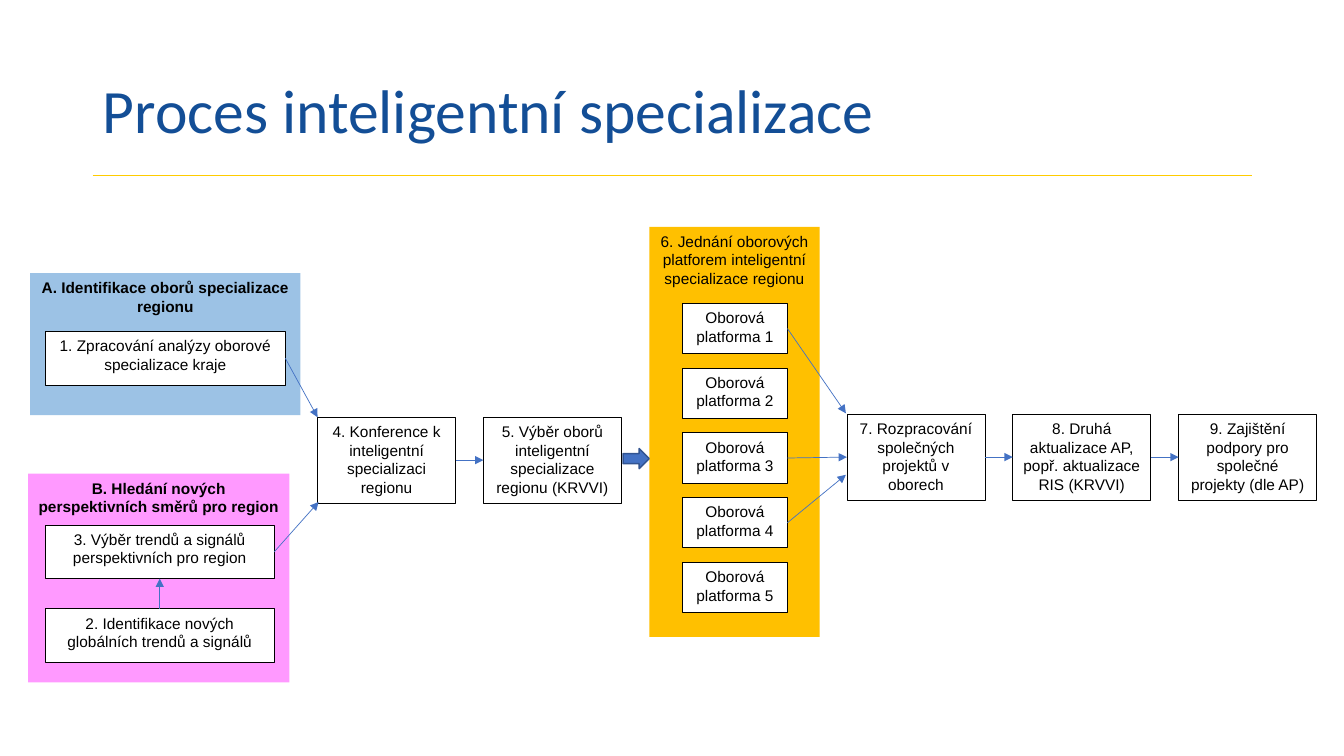
from lxml import etree
from pptx import Presentation
from pptx.dml.color import RGBColor
from pptx.enum.shapes import MSO_CONNECTOR as LINE, MSO_SHAPE as SHAPE
from pptx.enum.text import MSO_ANCHOR as ANCHOR, PP_ALIGN as ALIGN
from pptx.oxml.ns import qn
from pptx.util import Inches, Pt

# Grid of square cells, ten to the inch
CELL = Inches(0.1)
TOP, LEFT, BOTTOM, RIGHT = range(4)


def grid(*lengths):
    return [round(n * CELL) for n in lengths]


def rgb(color):
    return RGBColor.from_string(color)


class Diagram:
    black, white, blue = "000000", "FFFFFF", "4472C4"
    font, size = "Arial", 11

    def __init__(self, prs):
        self.slide = prs.slides.add_slide(prs.slide_layouts[5])

    def title(self, text, x, y, w, h):
        sp = self.slide.shapes.title
        sp.left, sp.top, sp.width, sp.height = grid(x, y, w, h)
        tf = sp.text_frame
        tf.text = text
        tf.vertical_anchor = ANCHOR.MIDDLE
        p = tf.paragraphs[0]
        p.alignment, p.line_spacing = ALIGN.LEFT, 0.9
        p.font.name, p.font.size = "Calibri", Pt(44)
        p.font.color.rgb = rgb("134E96")

    def shape(self, kind, x, y, w, h, fill, line=None, width=0.5):
        sp = self.slide.shapes.add_shape(kind, *grid(x, y, w, h))
        sp.shadow.inherit = False
        sp.fill.solid()
        sp.fill.fore_color.rgb = rgb(fill)
        if line:
            sp.line.color.rgb = rgb(line)
            sp.line.width = Pt(width)
        else:
            sp.line.fill.background()
        return sp

    def label(self, sp, text, bold=False):
        tf = sp.text_frame
        tf.word_wrap = True
        tf.vertical_anchor = ANCHOR.TOP
        tf.text = text
        p = tf.paragraphs[0]
        p.alignment = ALIGN.CENTER
        p.font.name, p.font.size, p.font.bold = self.font, Pt(self.size), bold
        p.font.color.rgb = rgb(self.black)

    def panel(self, text, x, y, w, h, fill, bold=True):
        self.label(self.shape(SHAPE.RECTANGLE, x, y, w, h, fill), text, bold)

    def box(self, text, x, y, w, h):
        sp = self.shape(SHAPE.RECTANGLE, x, y, w, h, self.white, self.black)
        self.label(sp, text)
        return sp

    def line(self, start, end, color, width):
        ln = self.slide.shapes.add_connector(
            LINE.STRAIGHT, *grid(*start, *end))
        ln.line.color.rgb = rgb(color)
        ln.line.width = Pt(width)
        etree.SubElement(ln._element.spPr, qn("a:effectLst"))
        return ln

    def arrow(self, box, side, end=None, target=None, target_side=LEFT):
        """Leads from a box side to a grid point or to a target box side."""
        ln = self.line((0, 0), end or (0, 0), self.blue, 0.5)
        ln.begin_connect(box, side)
        if target is not None:
            ln.end_connect(target, target_side)
        etree.SubElement(ln.line._get_or_add_ln(), qn("a:tailEnd"),
                         type="triangle")


def main():
    prs = Presentation()
    prs.slide_width, prs.slide_height = Inches(13.33), Inches(7.5)
    d = Diagram(prs)

    # Heading and rule
    d.line((9.2, 17.4), (124.2, 17.4), "FFCC00", 1)
    d.title("Proces inteligentní specializace", 9.2, 4, 115, 14.5)

    # Coloured panels
    d.panel("B. Hledání nových perspektivních směrů pro region",
            2.8, 47, 25.9, 20.7, "FF99FF")
    d.panel("A. Identifikace oborů specializace regionu",
            3, 27.1, 26.8, 14.1, "9CC2E5")
    d.panel("6. Jednání oborových platforem inteligentní specializace regionu",
            64.4, 22.5, 16.9, 40.7, "FFC000", bold=False)

    # Input steps
    analysis = d.box("1. Zpracování analýzy oborové specializace kraje",
                     4.5, 32.9, 23.8, 5.3)
    trends = d.box("2. Identifikace nových globálních trendů a signálů",
                   4.5, 60.4, 22.7, 5.3)
    choice = d.box("3. Výběr trendů a signálů perspektivních pro region",
                   4.5, 52.1, 22.7, 5.3)

    # Platforms, stacked at an equal pitch
    platforms = [d.box(f"Oborová platforma {i + 1}",
                       67.7, 30.1 + 6.42 * i, 10.4, 5) for i in range(5)]

    # Main sequence: two runs of boxes with the same pitch
    runs = [
        (31.5, 41.4, ["4. Konference k inteligentní specializaci regionu",
                      "5. Výběr oborů inteligentní specializace regionu "
                      "(KRVVI)"]),
        (84, 41.1, ["7. Rozpracování společných projektů v oborech",
                    "8. Druhá aktualizace AP, popř. aktualizace RIS (KRVVI)",
                    "9. Zajištění podpory pro společné projekty (dle AP)"]),
    ]
    steps = [[d.box(text, x + 16.45 * i, y, 13.7, 8.5)
              for i, text in enumerate(texts)] for x, y, texts in runs]
    for run in steps:
        for a, b in zip(run, run[1:]):
            d.arrow(a, RIGHT, target=b)

    # Arrows into the sequence
    d.arrow(trends, TOP, target=choice, target_side=BOTTOM)
    d.arrow(choice, RIGHT, end=(31.6, 49.8))
    d.arrow(analysis, RIGHT, end=(31.5, 41.4))
    d.arrow(platforms[0], RIGHT, end=(83.9, 41))
    d.arrow(platforms[2], RIGHT, target=steps[1][0])
    d.arrow(platforms[3], RIGHT, end=(83.9, 47.1))
    d.shape(SHAPE.RIGHT_ARROW, 61.8, 44.5, 2.6, 2, d.blue, "325491", 1)

    prs.save("out.pptx")


if __name__ == "__main__":
    main()
